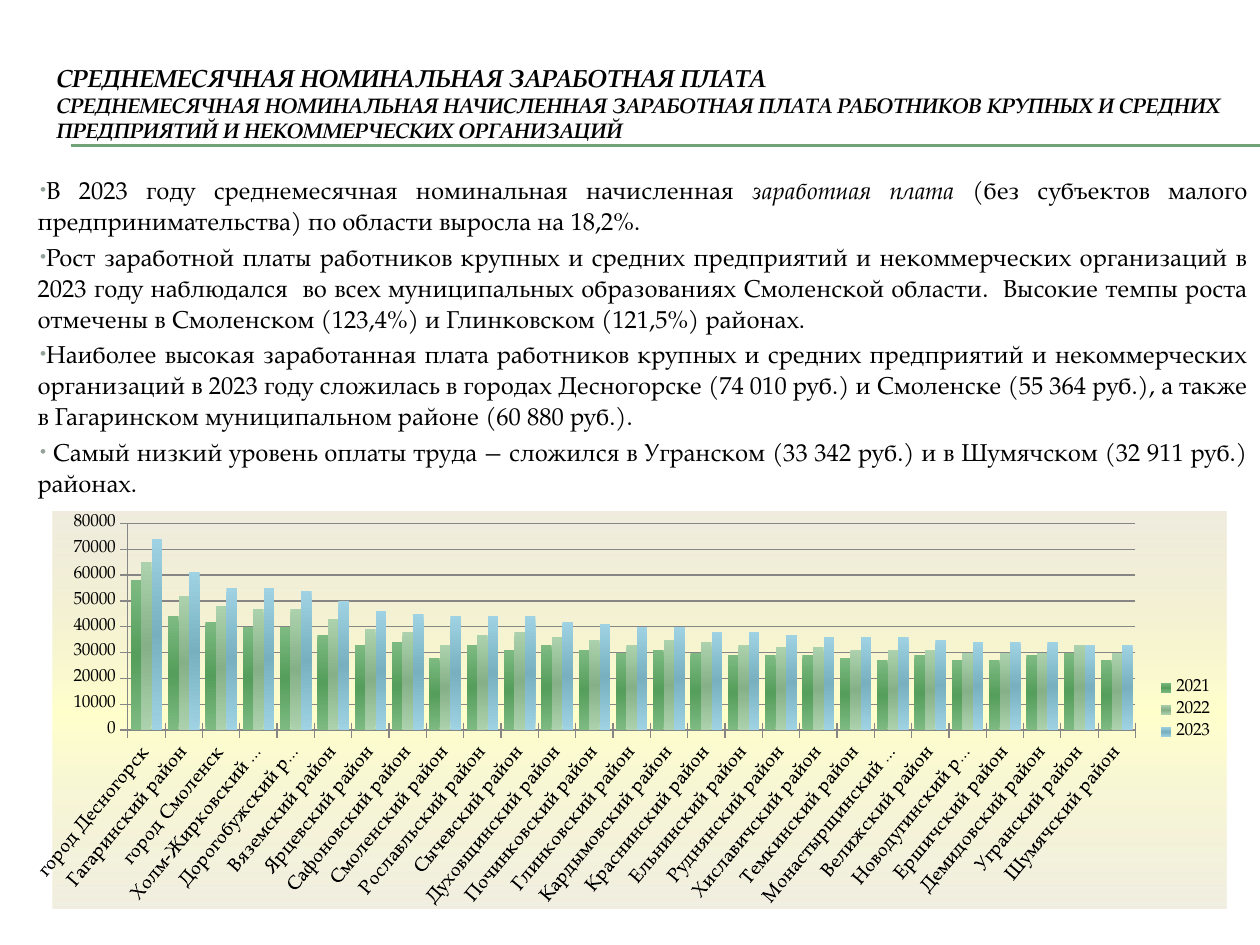
from dataclasses import dataclass

from lxml.etree import SubElement
from pptx import Presentation
from pptx.chart.data import CategoryChartData
from pptx.dml.color import RGBColor
from pptx.enum.chart import XL_CHART_TYPE, XL_LEGEND_POSITION, XL_TICK_MARK
from pptx.enum.shapes import MSO_CONNECTOR
from pptx.enum.text import MSO_ANCHOR, PP_ALIGN
from pptx.oxml import parse_xml
from pptx.oxml.ns import nsdecls, qn
from pptx.util import Inches, Pt

FONT = "TeX Gyre Pagella"
BLACK = RGBColor(0x00, 0x00, 0x00)
GREEN = RGBColor(0x72, 0xA3, 0x76)
BULLET_GREY = RGBColor(0x93, 0xA2, 0x99)
AXIS_GREY = RGBColor(0x86, 0x86, 0x86)


@dataclass
class Stop:
    position: int
    color: RGBColor
    opacity: int = 100


@dataclass
class YearSeries:
    name: str
    light: RGBColor
    dark: RGBColor
    thousands: list[int]


CHART_BACKGROUND = [
    Stop(0, RGBColor(0xE2, 0xDC, 0xC1), 52),
    Stop(50, RGBColor(0xFF, 0xFF, 0xCC)),
    Stop(100, RGBColor(0xEB, 0xE8, 0xD5), 71),
]

TITLE_LINES = [
    ("СРЕДНЕМЕСЯЧНАЯ НОМИНАЛЬНАЯ ЗАРАБОТНАЯ ПЛАТА", 14),
    ("СРЕДНЕМЕСЯЧНАЯ НОМИНАЛЬНАЯ НАЧИСЛЕННАЯ ЗАРАБОТНАЯ ПЛАТА РАБОТНИКОВ "
     "КРУПНЫХ И СРЕДНИХ ПРЕДПРИЯТИЙ И НЕКОММЕРЧЕСКИХ ОРГАНИЗАЦИЙ", 12),
]

# Each paragraph is a list of (text, italic) spans
BODY = [
    [("В 2023 году среднемесячная номинальная начисленная ", False),
     ("заработная плата ", True),
     ("(без субъектов малого предпринимательства) по области выросла на 18,2%.", False)],
    [("Рост заработной платы работников крупных и средних предприятий и некоммерческих "
      "организаций в 2023 году наблюдался  во всех муниципальных образованиях Смоленской "
      "области.  Высокие темпы роста отмечены в Смоленском (123,4%) и Глинковском (121,5%) "
      "районах.", False)],
    [("Наиболее высокая заработанная плата работников крупных и средних предприятий и "
      "некоммерческих организаций в 2023 году сложилась в городах Десногорске (74 010 руб.) "
      "и Смоленске (55 364 руб.), а также в Гагаринском муниципальном районе "
      "(60 880 руб.).", False)],
    [(" Самый низкий уровень оплаты труда − сложился в Угранском (33 342 руб.) и в "
      "Шумячском (32 911 руб.) районах.", False)],
]

DISTRICTS = [
    "Холм-Жирковский", "Дорогобужский", "Вяземский", "Ярцевский", "Сафоновский",
    "Смоленский", "Рославльский", "Сычевский", "Духовщинский", "Починковский",
    "Глинковский", "Кардымовский", "Краснинский", "Ельнинский", "Руднянский",
    "Хиславичский", "Темкинский", "Монастырщинский", "Велижский", "Новодугинский",
    "Ершичский", "Демидовский", "Угранский", "Шумячский",
]
PLACES = ["город Десногорск", "Гагаринский район", "город Смоленск"]
PLACES += [f"{district} район" for district in DISTRICTS]

YEARS = [
    YearSeries("2021", RGBColor(0x7D, 0xBA, 0x82), RGBColor(0x55, 0x9E, 0x5B),
               [58, 44, 42, 40, 40, 37, 33, 34, 28, 33, 31, 33, 31, 30, 31, 30, 29, 29,
                29, 28, 27, 29, 27, 27, 29, 30, 27]),
    YearSeries("2022", RGBColor(0xAB, 0xD2, 0xAC), RGBColor(0x86, 0xB0, 0x87),
               [65, 52, 48, 47, 47, 43, 39, 38, 33, 37, 38, 36, 35, 33, 35, 34, 33, 32,
                32, 31, 31, 31, 30, 30, 30, 33, 30]),
    YearSeries("2023", RGBColor(0x9F, 0xD3, 0xE3), RGBColor(0x78, 0xB0, 0xC0),
               [74, 61, 55, 55, 54, 50, 46, 45, 44, 44, 44, 42, 41, 40, 40, 38, 38, 37,
                36, 36, 36, 35, 34, 34, 34, 33, 33]),
]


def add_span(para, text: str, *, size: float, bold=False, italic=False) -> None:
    span = para.add_run()
    span.text = text
    font = span.font
    font.name, font.size, font.bold, font.italic = FONT, Pt(size), bold, italic
    font.color.rgb = BLACK


def add_text_box(page, left: float, top: float, width: float, height: float, anchor):
    box = page.shapes.add_textbox(Inches(left), Inches(top), Inches(width), Inches(height))
    frame = box.text_frame
    frame.word_wrap = True
    frame.vertical_anchor = anchor
    return frame


def next_paragraph(frame, index: int):
    return frame.add_paragraph() if index else frame.paragraphs[0]


def add_bullet(para) -> None:
    properties = para._p.get_or_add_pPr()
    properties.set("marL", "0")
    properties.set("indent", str(Inches(0.02)))
    color = SubElement(properties, qn("a:buClr"))
    SubElement(color, qn("a:srgbClr"), val=str(BULLET_GREY))
    SubElement(properties, qn("a:buSzPct"), val="70000")
    SubElement(properties, qn("a:buFont"), typeface="Arial")
    SubElement(properties, qn("a:buChar"), char="•")


def add_rule(page, top: float) -> None:
    rule = page.shapes.add_connector(
        MSO_CONNECTOR.STRAIGHT, Inches(0.56), Inches(top), Inches(10), Inches(top))
    rule.line.color.rgb = GREEN
    rule.line.width = Pt(0.75)
    SubElement(rule._element.spPr, qn("a:effectLst"))


def set_gradient(fill, stops: list[Stop]) -> None:
    """Fill from top to bottom through any number of stops."""
    fill.gradient()
    fill.gradient_angle = 270
    stop_list = fill._fill._gradFill.find(qn("a:gsLst"))
    for old_stop in list(stop_list):
        stop_list.remove(old_stop)
    for stop in stops:
        item = SubElement(stop_list, qn("a:gs"), pos=str(stop.position * 1000))
        color = SubElement(item, qn("a:srgbClr"), val=str(stop.color))
        SubElement(color, qn("a:alpha"), val=str(stop.opacity * 1000))


def set_font(font, size: float) -> None:
    font.name, font.size = FONT, Pt(size)
    font.color.rgb = BLACK


def add_wage_chart(page) -> None:
    data = CategoryChartData()
    data.categories = PLACES
    for year in YEARS:
        data.add_series(year.name, [value * 1000 for value in year.thousands])
    chart = page.shapes.add_chart(
        XL_CHART_TYPE.COLUMN_CLUSTERED,
        Inches(0.28), Inches(4.06), Inches(9.45), Inches(3.15), data).chart
    set_font(chart.font, 18)
    chart.has_title = False
    chart.has_legend = True
    chart.legend.position = XL_LEGEND_POSITION.RIGHT
    chart.legend.include_in_layout = False
    set_font(chart.legend.font, 10)

    # Columns
    plot = chart.plots[0]
    plot.gap_width = 54
    plot.vary_by_categories = False
    for series, year in zip(plot.series, YEARS):
        set_gradient(series.format.fill,
                     [Stop(0, year.light), Stop(50, year.dark), Stop(100, year.light)])

    # Axes
    for axis, size in ((chart.category_axis, 11), (chart.value_axis, 10)):
        axis.major_tick_mark = XL_TICK_MARK.CROSS
        axis.format.line.color.rgb = AXIS_GREY
        set_font(axis.tick_labels.font, size)
    chart.value_axis.minimum_scale = 0
    chart.value_axis.maximum_scale = 80000
    chart.value_axis.major_unit = 10000
    chart.value_axis.major_gridlines.format.line.color.rgb = AXIS_GREY
    label_body = chart.category_axis._element.find(qn("c:txPr")).find(qn("a:bodyPr"))
    label_body.set("rot", str(-50 * 60000))

    # Plot area position and chart background
    plot_area = chart._chartSpace.chart.plotArea
    for old_layout in plot_area.findall(qn("c:layout")):
        plot_area.remove(old_layout)
    layout = parse_xml(f"<c:layout {nsdecls('c')}><c:manualLayout/></c:layout>")
    for tag, value in (("layoutTarget", "inner"), ("xMode", "edge"), ("yMode", "edge"),
                       ("x", "0.064"), ("y", "0.03"), ("w", "0.859"), ("h", "0.521")):
        SubElement(layout[0], qn(f"c:{tag}"), val=value)
    plot_area.insert(0, layout)
    background = parse_xml(f"<c:spPr {nsdecls('c', 'a')}><a:ln><a:noFill/></a:ln></c:spPr>")
    chart._chartSpace.chart.addnext(background)
    # The plot's fill helper also serves the chart space
    set_gradient(type(plot.series[0].format.fill).from_fill_parent(background), CHART_BACKGROUND)


def main() -> None:
    deck = Presentation()
    deck.slide_width, deck.slide_height = Inches(10), Inches(7.5)
    page = deck.slides.add_slide(deck.slide_layouts[6])

    # Double rule under the title
    for top in (1.15, 1.16):
        add_rule(page, top)

    # Title
    title = add_text_box(page, 0.35, 0.36, 9.5, 0.92, MSO_ANCHOR.MIDDLE)
    for index, (text, size) in enumerate(TITLE_LINES):
        add_span(next_paragraph(title, index), text, size=size, bold=True, italic=True)

    # Body
    body = add_text_box(page, 0.2, 1.33, 9.8, 2.91, MSO_ANCHOR.TOP)
    for index, spans in enumerate(BODY):
        para = next_paragraph(body, index)
        add_bullet(para)
        para.alignment = PP_ALIGN.JUSTIFY
        para.line_spacing = 1.05
        if index:
            para.space_before = Pt(2.8)
        for text, italic in spans:
            add_span(para, text, size=14, italic=italic)

    add_wage_chart(page)
    deck.save("out.pptx")


if __name__ == "__main__":
    main()
